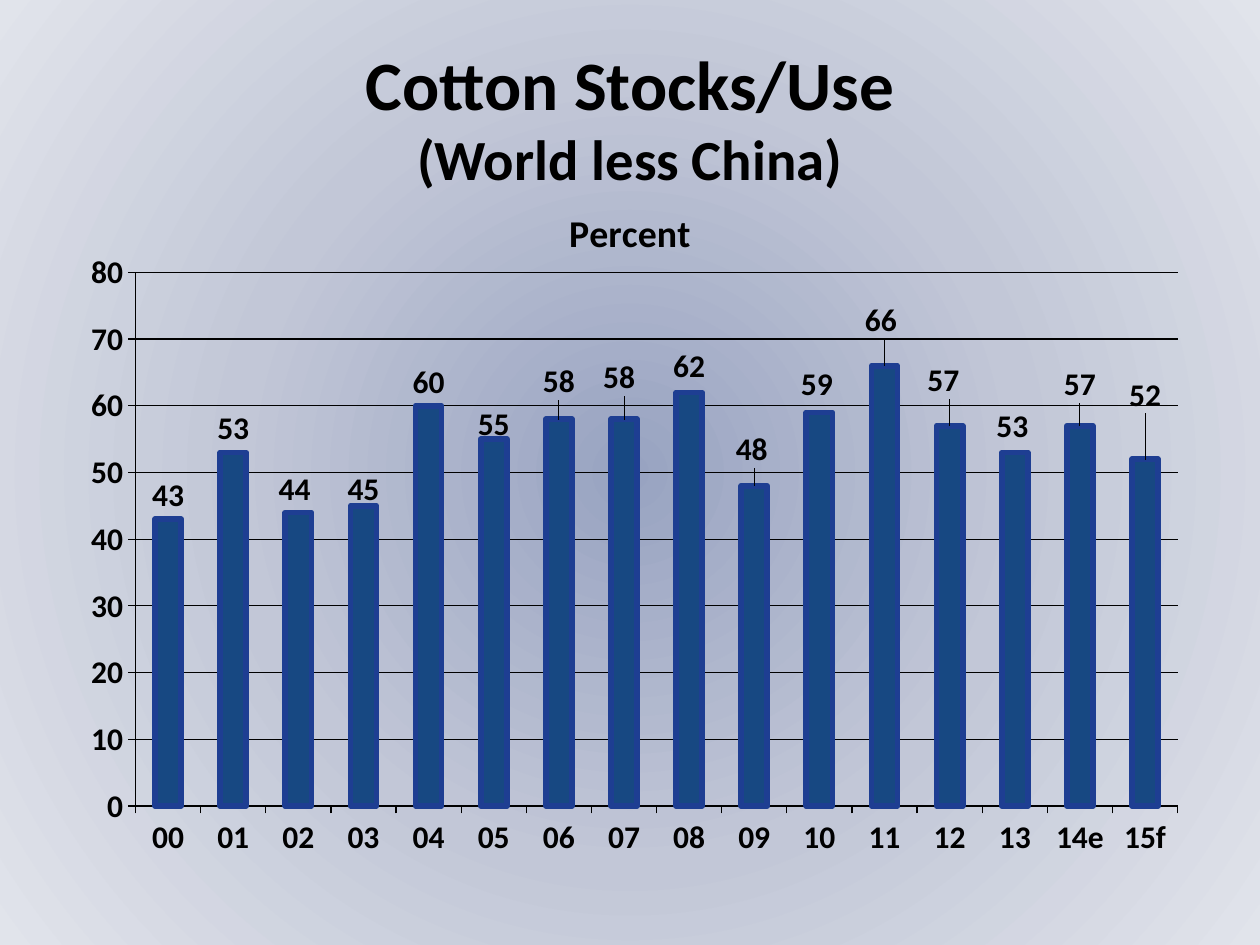
from lxml import etree
from pptx import Presentation
from pptx import util as u
from pptx.chart.data import CategoryChartData
from pptx.dml.color import RGBColor
from pptx.enum import chart as ch, text
from pptx.oxml import parse_xml
from pptx.oxml.ns import nsdecls, qn

TITLE = ("Cotton Stocks/Use", "(World less China)")
CHART_TITLE = "Percent"
STOCKS = {
    "00": 43, "01": 53, "02": 44, "03": 45, "04": 60, "05": 55,
    "06": 58, "07": 58, "08": 62, "09": 48, "10": 59, "11": 66,
    "12": 57, "13": 53, "14e": 57, "15f": 52,
}
LABEL_SHIFTS = {
    "02": (-0.03, 0.01), "03": (0, 0.06), "05": (0, 0.07), "06": (0, -0.11),
    "07": (-0.04, -0.14), "08": (0, -0.02), "09": (-0.02, -0.1),
    "10": (-0.02, -0.03), "11": (-0.03, -0.17), "12": (-0.05, -0.17),
    "13": (-0.02, -0.02), "14e": (0, -0.14), "15f": (0, -0.32),
}
TITLE_BOX = (0.5, 0.3, 9, 1.25)
CHART_BOX = (0.5, 1.42, 9, 5.5)
PLOT = {"x": 0.064, "y": 0.135, "w": 0.919, "h": 0.77}
THEME = {
    "font": "Calibri", "ink": "000000", "bar": "174882", "edge": "1E3E92",
    "glow": ((0, "98A3C1"), (50, "C2C7D7"), (100, "E1E4EB")),
    "title": (39.6, 32.4), "chart_title": 21.6, "body": 18,
    "rule": 0.75, "edge_width": 3.25,
}


def style_font(font, size):
    font.name = THEME["font"]
    font.size = u.Pt(size)
    font.bold = True
    font.color.rgb = RGBColor.from_string(THEME["ink"])


def style_line(line, color, width):
    line.color.rgb = RGBColor.from_string(color)
    line.width = u.Pt(width)


def add_background(s):
    fill = s.background.fill
    fill.gradient()
    grad = s._element.find(".//" + qn("a:gradFill"))
    stops = "".join(
        f'<a:gs pos="{pos * 1000}"><a:srgbClr val="{color}"/></a:gs>'
        for pos, color in THEME["glow"])
    grad.getparent().replace(grad, parse_xml(
        f'<a:gradFill {nsdecls("a")} rotWithShape="1"><a:gsLst>{stops}</a:gsLst>'
        '<a:path path="circle"><a:fillToRect l="50000" t="50000" r="50000" b="50000"/>'
        '</a:path></a:gradFill>'))


def add_title(s):
    tf = s.shapes.add_textbox(*map(u.Inches, TITLE_BOX)).text_frame
    tf.word_wrap = True
    tf.vertical_anchor = text.MSO_ANCHOR.MIDDLE
    p = tf.paragraphs[0]
    p.alignment = text.PP_ALIGN.CENTER
    for i, (words, size) in enumerate(zip(TITLE, THEME["title"])):
        if i:
            p.add_line_break()
        r = p.add_run()
        r.text = words
        style_font(r.font, size)


def make_layout(**values):
    layout = etree.Element(qn("c:layout"))
    manual = etree.SubElement(layout, qn("c:manualLayout"))
    for tag, value in values.items():
        etree.SubElement(manual, qn("c:" + tag)).set("val", str(value))
    return layout


def style_axis(axis):
    axis.major_tick_mark = ch.XL_TICK_MARK.OUTSIDE
    axis.minor_tick_mark = ch.XL_TICK_MARK.NONE
    style_line(axis.format.line, THEME["ink"], THEME["rule"])
    style_font(axis.tick_labels.font, THEME["body"])


def add_labels(series):
    labels = series.data_labels
    labels.show_value = True
    labels.position = ch.XL_LABEL_POSITION.OUTSIDE_END
    labels.number_format = "#,##0"
    labels.number_format_is_linked = False
    style_font(labels.font, THEME["body"])
    for i, year in enumerate(STOCKS):
        if year in LABEL_SHIFTS:
            label = series.points[i].data_label
            label.position = ch.XL_LABEL_POSITION.OUTSIDE_END
            style_font(label.font, THEME["body"])
    years = list(STOCKS)
    for label in series._element.iter(qn("c:dLbl")):
        idx = label.find(qn("c:idx"))
        dx, dy = LABEL_SHIFTS[years[int(idx.get("val"))]]
        idx.addnext(make_layout(x=round(dx / CHART_BOX[2], 4),
                                y=round(dy / CHART_BOX[3], 4)))


def add_stocks_chart(s):
    data = CategoryChartData(number_format="#,##0")
    data.categories = list(STOCKS)
    data.add_series("Series 1", list(STOCKS.values()))
    chart = s.shapes.add_chart(ch.XL_CHART_TYPE.COLUMN_CLUSTERED,
                               *map(u.Inches, CHART_BOX), data).chart
    style_font(chart.font, THEME["body"])
    chart.has_legend = False
    chart.has_title = True
    r = chart.chart_title.text_frame.paragraphs[0].add_run()
    r.text = CHART_TITLE
    style_font(r.font, THEME["chart_title"])
    chart.chart_title.include_in_layout = False

    style_axis(chart.category_axis)
    axis = chart.value_axis
    style_axis(axis)
    axis.minimum_scale, axis.maximum_scale, axis.major_unit = 0, 80, 10
    axis.tick_labels.number_format = "#,##0"
    axis.tick_labels.number_format_is_linked = False
    style_line(axis.major_gridlines.format.line, THEME["ink"], THEME["rule"])

    plot = chart.plots[0]
    plot.gap_width = 110
    plot.gap_width = 150 if len(plot.series) == 1 else plot.gap_width
    plot.vary_by_categories = False
    series = plot.series[0]
    series.format.fill.solid()
    series.format.fill.fore_color.rgb = RGBColor.from_string(THEME["bar"])
    style_line(series.format.line, THEME["edge"], THEME["edge_width"])
    add_labels(series)

    area = chart._chartSpace.find(".//" + qn("c:plotArea"))
    for old in area.findall(qn("c:layout")):
        area.remove(old)
    area.insert(0, make_layout(layoutTarget="inner", xMode="edge", yMode="edge", **PLOT))


def main():
    prs = Presentation()
    prs.slide_width, prs.slide_height = u.Inches(10), u.Inches(7.5)
    s = prs.slides.add_slide(prs.slide_layouts[6])
    add_background(s)
    add_title(s)
    add_stocks_chart(s)
    prs.save("out.pptx")


if __name__ == "__main__":
    main()
